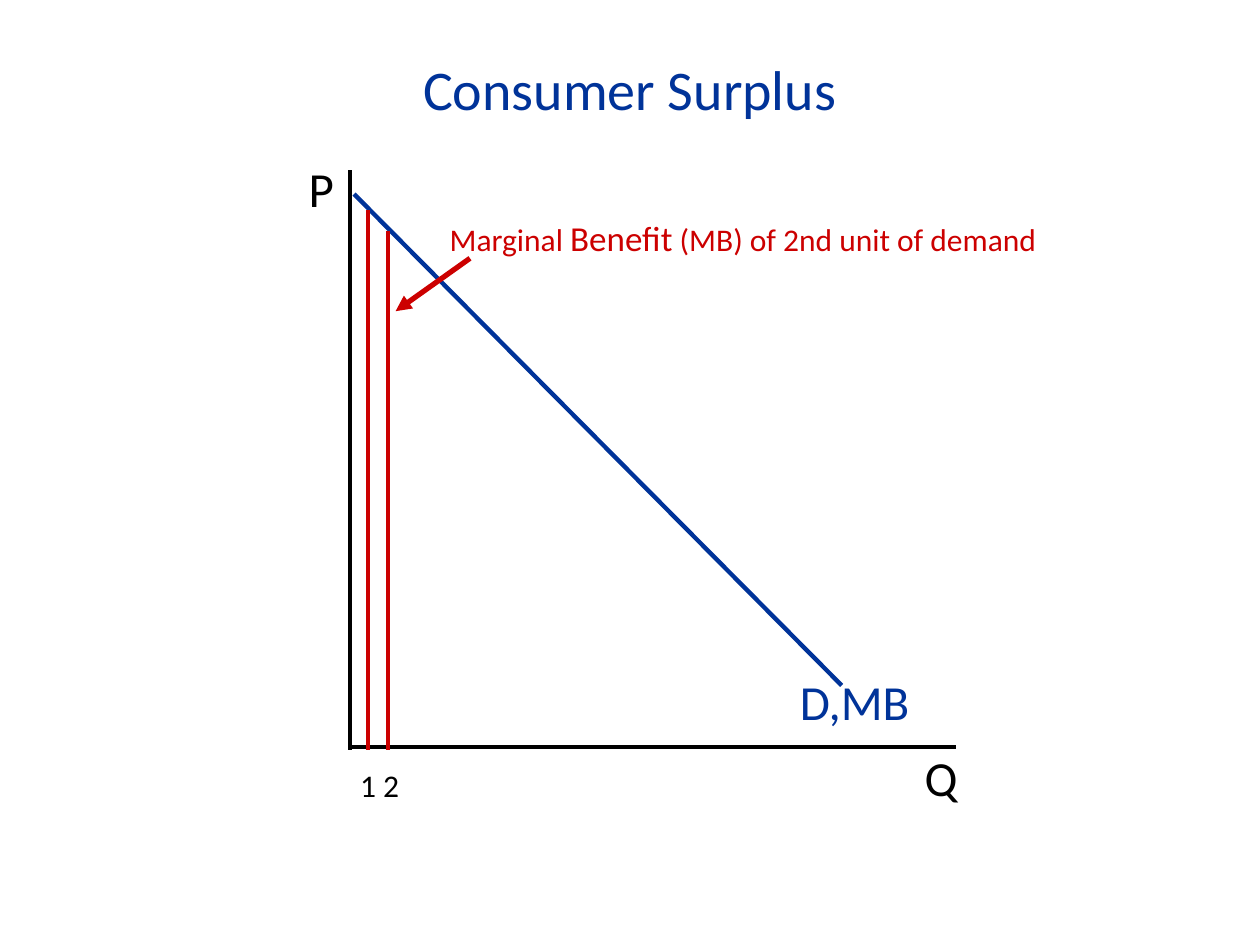
import dataclasses

import pptx
import pptx.dml.color
import pptx.enum.shapes
import pptx.enum.text
import pptx.oxml
import pptx.oxml.ns
import pptx.util

PX = 9144


@dataclasses.dataclass(frozen=True)
class Theme:
    font: str = "Calibri"
    blue: str = "003399"
    red: str = "CC0000"
    black: str = "000000"
    title: int = 32
    label: int = 28
    strong: int = 20
    note: int = 18
    thin: float = 2.5
    thick: float = 3


class Slide:
    def __init__(self, deck, theme):
        self.theme = theme
        self.page = deck.slides.add_slide(deck.slide_layouts[5])

    def fill(self, shape, runs, color, wrap=True):
        frame = shape.text_frame
        frame.word_wrap = wrap
        frame.auto_size = pptx.enum.text.MSO_AUTO_SIZE.SHAPE_TO_FIT_TEXT
        par = frame.paragraphs[0]
        for text, size in runs:
            run = par.add_run()
            run.text = text
            run.font.name = self.theme.font
            run.font.size = pptx.util.Pt(size)
            run.font.color.rgb = pptx.dml.color.RGBColor.from_string(color)
        return par

    def title(self, box, text):
        shape = self.page.shapes.title
        shape.left, shape.top, shape.width, shape.height = (n * PX for n in box)
        par = self.fill(shape, [(text, self.theme.title)], self.theme.blue)
        par.alignment = pptx.enum.text.PP_ALIGN.CENTER
        shape.text_frame.vertical_anchor = pptx.enum.text.MSO_ANCHOR.MIDDLE

    def text(self, box, runs, color, wrap=True):
        shape = self.page.shapes.add_textbox(*(n * PX for n in box))
        return self.fill(shape, runs, color, wrap)

    def line(self, start, end, color, width, arrow=False):
        kind = pptx.enum.shapes.MSO_CONNECTOR.STRAIGHT
        shape = self.page.shapes.add_connector(
            kind, *(n * PX for n in start + end))
        shape.line.color.rgb = pptx.dml.color.RGBColor.from_string(color)
        shape.line.width = pptx.util.Pt(width)
        if arrow:
            head = pptx.oxml.parse_xml(
                f'<a:tailEnd {pptx.oxml.ns.nsdecls("a")} type="triangle"/>')
            shape.line._get_or_add_ln().append(head)
        shape._element.spPr.append(pptx.oxml.parse_xml(
            f'<a:effectLst {pptx.oxml.ns.nsdecls("a")}/>'))


def main():
    deck = pptx.Presentation()
    deck.slide_width, deck.slide_height = 1000 * PX, 750 * PX
    theme = Theme()
    slide = Slide(deck, theme)
    base = 595

    slide.title((70, 38, 860, 64), "Consumer Surplus")

    slide.text((625, 528, 144, 57), [("D,MB", theme.label)], theme.blue)
    slide.line((278, 135), (278, base), theme.black, theme.thin)
    slide.line((279, 593), (759, 593), theme.black, theme.thin)
    slide.text((724, 588, 51, 57), [("Q", theme.label)], theme.black)
    price = slide.text((235, 130, 45, 49), [("P", theme.label)], theme.black)
    price.line_spacing = 0.8
    slide.line((281, 154), (668, 544), theme.blue, theme.thin)

    for left, top in ((292, 167), (308, 183)):
        slide.line((left, top), (left, base), theme.red, theme.thin)
    slide.text((276, 603, 81, 41), [("1 2", theme.note)], theme.black)

    note = [
        ("Marginal ", theme.note),
        ("Benefit", theme.strong),
        (" (MB) of 2nd unit of demand", theme.note),
    ]
    slide.text((347, 167, 492, 44), note, theme.red, wrap=False)
    slide.line((373, 205), (314, 247), theme.red, theme.thick, arrow=True)

    deck.save("out.pptx")


if __name__ == "__main__":
    main()
